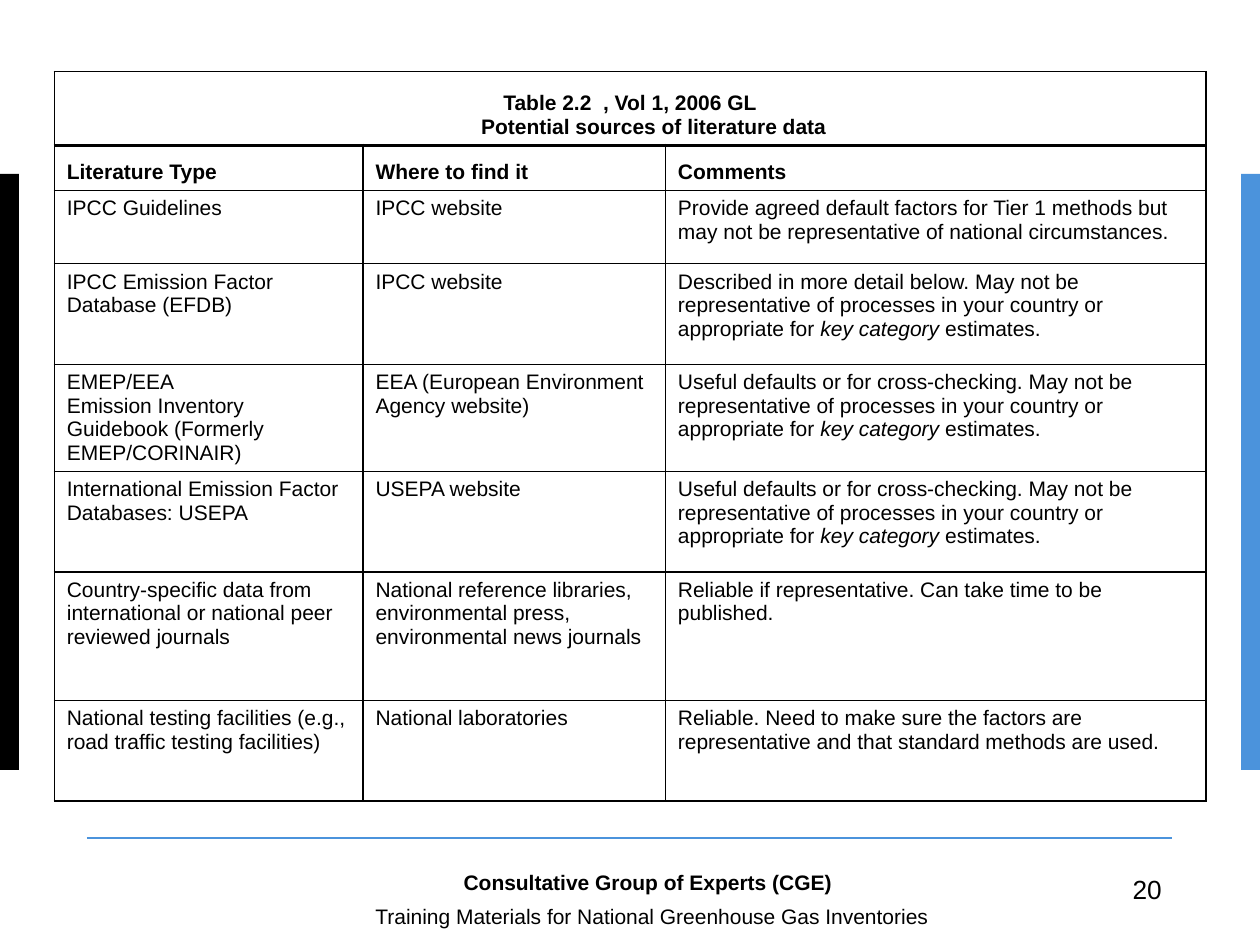
from lxml import etree
from pptx import Presentation
from pptx.dml.color import RGBColor
from pptx.enum import shapes, text
from pptx.oxml import ns
from pptx.util import Pt

BLACK = RGBColor(0x00, 0x00, 0x00)
WHITE = RGBColor(0xFF, 0xFF, 0xFF)
BLUE = RGBColor(0x4B, 0x93, 0xDC)
FONT = "Arial"

TITLE = "Table 2.2  , Vol 1, 2006 GL\vPotential sources of literature data"
HEADINGS = ["Literature Type", "Where to find it", "Comments"]
KEY_CATEGORY = "key category"
CROSS_CHECK = ("Useful defaults or for cross-checking. May not be representative of "
               "processes in your country or appropriate for key category estimates.")
SOURCES = [
    ["IPCC Guidelines", "IPCC website",
     "Provide agreed default factors for Tier 1 methods but may not be "
     "representative of national circumstances."],
    ["IPCC Emission Factor Database (EFDB)", "IPCC website",
     "Described in more detail below. May not be representative of processes in "
     "your country or appropriate for key category estimates."],
    ["EMEP/EEA\nEmission Inventory Guidebook (Formerly EMEP/CORINAIR)",
     "EEA (European Environment Agency website)", CROSS_CHECK],
    ["International Emission Factor Databases: USEPA", "USEPA website", CROSS_CHECK],
    ["Country-specific data from international or national peer reviewed journals",
     "National reference libraries, environmental press, environmental news journals",
     "Reliable if representative. Can take time to be published."],
    ["National testing facilities (e.g., road traffic testing facilities)",
     "National laboratories",
     "Reliable. Need to make sure the factors are representative and that standard "
     "methods are used."],
]
COLUMN_WIDTHS = [176.4, 172.8, 309]
ROW_HEIGHTS = [41.9, 25.9, 41.9, 57.6, 60.5, 57.6, 73.4, 57.6]
COLUMN_RULES = [1, 0.75, 0.75, 1]
ROW_RULES = [1, 2, 1, 0.75, 0.75, 0.75, 0.75, 0.75, 1]


def add_run(paragraph, words, size=12, bold=False, italic=False):
    run = paragraph.add_run()
    run.text = words
    font = run.font
    font.name, font.size, font.bold, font.italic = FONT, Pt(size), bold, italic
    font.color.rgb = BLACK


def set_borders(cell, left, right, top, bottom):
    properties = cell._tc.get_or_add_tcPr()
    for place, (side, weight) in enumerate(zip("LRTB", (left, right, top, bottom))):
        line = etree.Element(ns.qn(f"a:ln{side}"), w=str(Pt(weight)))
        fill = etree.SubElement(line, ns.qn("a:solidFill"))
        etree.SubElement(fill, ns.qn("a:srgbClr"), val=str(BLACK))
        properties.insert(place, line)


def fill_cell(cell, words, bold=False):
    """Write the words, with each mention of the key category in italics."""
    cell.fill.solid()
    cell.fill.fore_color.rgb = WHITE
    cell.margin_left = cell.margin_right = Pt(7.2)
    cell.margin_top = cell.margin_bottom = Pt(3.6)
    cell.vertical_anchor = text.MSO_ANCHOR.BOTTOM if bold else text.MSO_ANCHOR.TOP
    frame = cell.text_frame
    for index, line in enumerate(words.split("\n")):
        paragraph = frame.add_paragraph() if index else frame.paragraphs[0]
        before, key, after = line.partition(KEY_CATEGORY)
        add_run(paragraph, before, bold=bold)
        if key:
            add_run(paragraph, key, italic=True)
            add_run(paragraph, after)


def add_title(table):
    title = table.cell(0, 0)
    title.merge(table.cell(0, len(COLUMN_WIDTHS) - 1))
    title.fill.solid()
    title.fill.fore_color.rgb = WHITE
    title.vertical_anchor = text.MSO_ANCHOR.BOTTOM
    paragraph = title.text_frame.paragraphs[0]
    paragraph.alignment = text.PP_ALIGN.CENTER
    hanging = paragraph._p.get_or_add_pPr()
    hanging.set("marL", str(Pt(27)))
    hanging.set("indent", str(-Pt(27)))
    first, second = TITLE.split("\v")
    add_run(paragraph, first, bold=True)
    paragraph.add_line_break()
    add_run(paragraph, second, bold=True)
    set_borders(title, COLUMN_RULES[0], COLUMN_RULES[-1], *ROW_RULES[:2])


def add_sources_table(slide, left, top):
    table = slide.shapes.add_table(
        len(ROW_HEIGHTS), len(COLUMN_WIDTHS), Pt(left), Pt(top),
        Pt(sum(COLUMN_WIDTHS)), Pt(sum(ROW_HEIGHTS))).table
    table.first_row = table.horz_banding = False
    for column, width in zip(table.columns, COLUMN_WIDTHS):
        column.width = Pt(width)
    for row, height in zip(table.rows, ROW_HEIGHTS):
        row.height = Pt(height)
    add_title(table)
    for r, entries in enumerate([HEADINGS] + SOURCES, start=1):
        for c, words in enumerate(entries):
            cell = table.cell(r, c)
            fill_cell(cell, words, bold=r == 1)
            set_borders(cell, *COLUMN_RULES[c:c + 2], *ROW_RULES[r:r + 2])


def add_side_bars(slide, top, slide_width):
    width, height = 10.8, 340.6
    for left, color in ((0, BLACK), (slide_width - width, BLUE)):
        bar = slide.shapes.add_shape(shapes.MSO_SHAPE.RECTANGLE, Pt(left), Pt(top),
                                     Pt(width), Pt(height))
        bar.shadow.inherit = False
        bar.fill.solid()
        bar.fill.fore_color.rgb = color
        bar.line.fill.background()


def add_label(slide, left, top, width, height, words, size=12, bold=False):
    frame = slide.shapes.add_textbox(Pt(left), Pt(top), Pt(width), Pt(height)).text_frame
    frame.word_wrap = True
    add_run(frame.paragraphs[0], words, size, bold)


def add_footer(slide, left, top, width):
    rule = slide.shapes.add_connector(shapes.MSO_CONNECTOR.STRAIGHT, Pt(left), Pt(top),
                                      Pt(left + width), Pt(top))
    rule.line.color.rgb = BLUE
    rule.line.width = Pt(1)
    etree.SubElement(rule._element.spPr, ns.qn("a:effectLst"))
    add_label(slide, left + 590.4, top + 16.6, 31.7, 25.2, "20", size=15)
    add_label(slide, left + 157.7, top + 33.7, 411.8, 14.4,
              "Training Materials for National Greenhouse Gas Inventories")
    add_label(slide, left + 208.1, top + 14.4, 244.1, 19.4,
              "Consultative Group of Experts (CGE)", bold=True)


def main():
    deck = Presentation()
    deck.slide_width, deck.slide_height = Pt(720), Pt(540)
    slide = deck.slides.add_slide(deck.slide_layouts[6])
    add_side_bars(slide, top=99.4, slide_width=720)
    add_sources_table(slide, left=31, top=41)
    add_footer(slide, left=49.7, top=478.8, width=620)
    deck.save("out.pptx")


if __name__ == "__main__":
    main()
